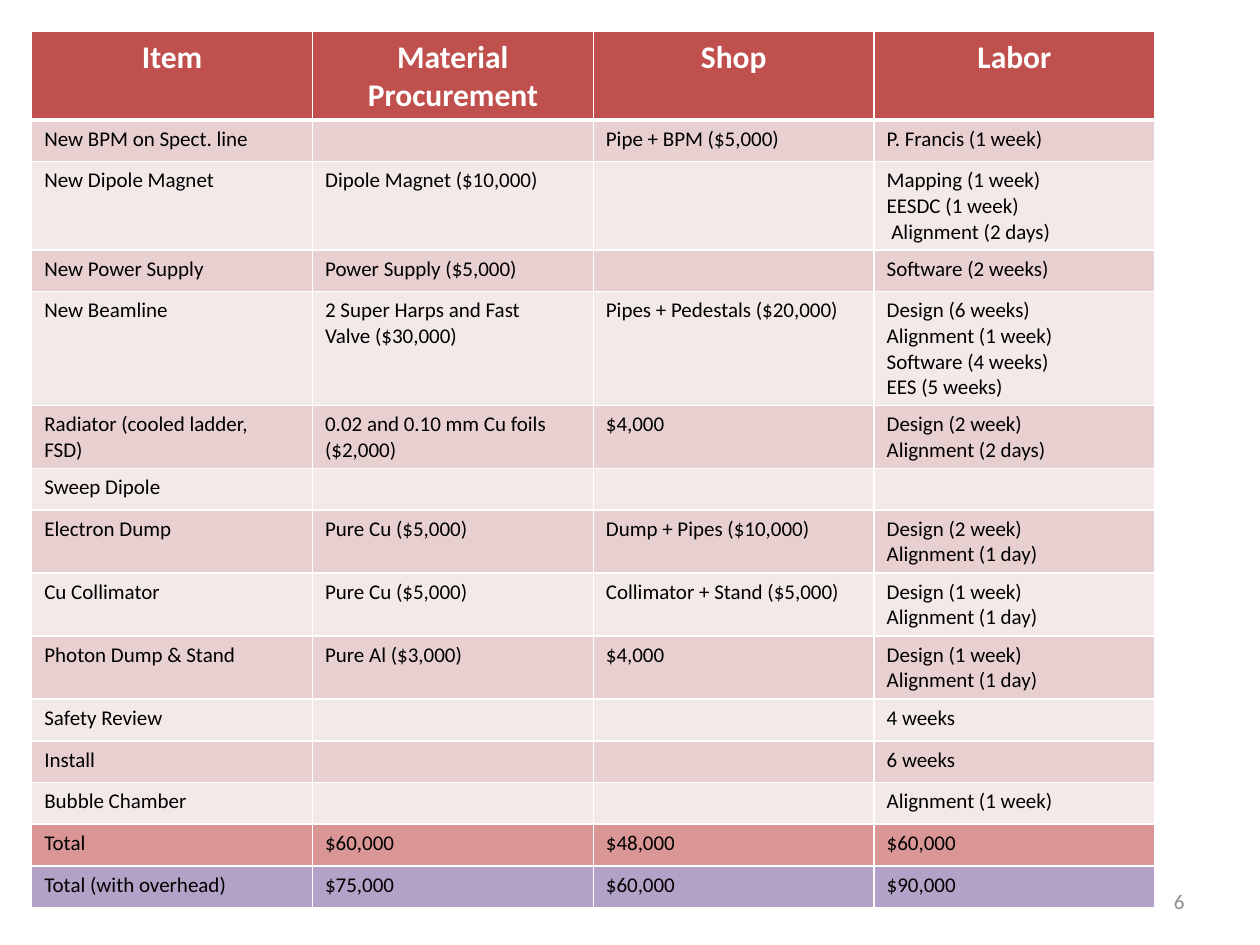
from lxml import etree
from pptx import Presentation
from pptx import util as u
from pptx.dml.color import RGBColor
from pptx.enum import text
from pptx.oxml import ns

WHITE = RGBColor(0xFF, 0xFF, 0xFF)
BLACK = RGBColor(0x00, 0x00, 0x00)
GRAY = RGBColor(0x8C, 0x8C, 0x8C)
RED = RGBColor(0xC0, 0x50, 0x4D)
BAND_DARK = RGBColor(0xE8, 0xD0, 0xD0)
BAND_LIGHT = RGBColor(0xF4, 0xE9, 0xE9)
ROSE = RGBColor(0xD9, 0x96, 0x94)
PURPLE = RGBColor(0xB3, 0xA2, 0xC7)

HEADER = {"name": "Calibri", "size": u.Pt(18), "bold": True}
BODY = {"name": "Calibri", "size": u.Pt(12), "bold": False}

COSTS = [
    ["Item", "Material\nProcurement", "Shop", "Labor"],
    ["New BPM on Spect. line", "", "Pipe + BPM ($5,000)", "P. Francis (1 week)"],
    ["New Dipole Magnet", "Dipole Magnet ($10,000)", "",
     "Mapping (1 week)\nEESDC (1 week)\n Alignment (2 days)"],
    ["New Power Supply", "Power Supply ($5,000)", "", "Software (2 weeks)"],
    ["New Beamline", "2 Super Harps and Fast\nValve ($30,000)", "Pipes + Pedestals ($20,000)",
     "Design (6 weeks)\nAlignment (1 week)\nSoftware (4 weeks)\nEES (5 weeks)"],
    ["Radiator (cooled ladder,\nFSD)", "0.02 and 0.10 mm Cu foils ($2,000)", "$4,000",
     "Design (2 week)\nAlignment (2 days)"],
    ["Sweep Dipole", "", "", ""],
    ["Electron Dump", "Pure Cu ($5,000)", "Dump + Pipes ($10,000)",
     "Design (2 week)\nAlignment (1 day)"],
    ["Cu Collimator", "Pure Cu ($5,000)", "Collimator + Stand ($5,000)",
     "Design (1 week)\nAlignment (1 day)"],
    ["Photon Dump & Stand", "Pure Al ($3,000)", "$4,000",
     "Design (1 week)\nAlignment (1 day)"],
    ["Safety Review", "", "", "4 weeks"],
    ["Install", "", "", "6 weeks"],
    ["Bubble Chamber", "", "", "Alignment (1 week)"],
    ["Total", "$60,000", "$48,000", "$60,000"],
    ["Total (with overhead)", "$75,000", "$60,000", "$90,000"],
]
BANDS = [BAND_DARK, BAND_LIGHT] * 6
ROW_FILLS = [RED, *BANDS, ROSE, PURPLE]


class SlideBuilder:
    def __init__(self, slide):
        self.slide = slide

    def fill_text(self, frame, content, style, color, align):
        frame.text = content
        for paragraph in frame.paragraphs:
            paragraph.alignment = align
            for run in paragraph.runs:
                for key, value in style.items():
                    setattr(run.font, key, value)
                run.font.color.rgb = color
            if not paragraph.runs:  # keeps an empty cell as low as its row
                end = etree.SubElement(paragraph._p, ns.qn("a:endParaRPr"))
                end.set("sz", str(int(style["size"].pt * 100)))

    def text_box(self, content, left, top, width, height, style, color, align):
        box = self.slide.shapes.add_textbox(u.Cm(left), u.Cm(top), u.Cm(width), u.Cm(height))
        frame = box.text_frame
        frame.word_wrap = True
        frame.vertical_anchor = text.MSO_ANCHOR.MIDDLE
        self.fill_text(frame, content, style, color, align)

    def borders(self, cell, widths):
        properties = cell._tc.get_or_add_tcPr()
        for side, width in widths.items():
            line = etree.SubElement(properties, ns.qn(f"a:ln{side}"), w=str(u.Pt(width)))
            fill = etree.SubElement(line, ns.qn("a:solidFill"))
            etree.SubElement(fill, ns.qn("a:srgbClr"), val=str(WHITE))

    def table(self, rows, fills, left, top, column_width, header_height):
        # A body row is as high as its longest cell, with a common minimum
        line_counts = [max(cell.count("\n") + 1 for cell in row) for row in rows[1:]]
        heights = [header_height] + [max(0.84, 0.25 + 0.51 * count) for count in line_counts]
        columns = len(rows[0])
        table = self.slide.shapes.add_table(
            len(rows), columns, u.Cm(left), u.Cm(top),
            u.Cm(column_width * columns), u.Cm(sum(heights))).table
        table.horz_banding = False
        for column in table.columns:
            column.width = u.Cm(column_width)
        for i, (row, fill, height) in enumerate(zip(rows, fills, heights)):
            table.rows[i].height = u.Cm(height)
            header = i == 0
            style, color, align = (
                (HEADER, WHITE, text.PP_ALIGN.CENTER) if header
                else (BODY, BLACK, text.PP_ALIGN.LEFT))
            widths = {"L": 1, "R": 1, "T": 3 if i == 1 else 1, "B": 3 if header else 1}
            for j, content in enumerate(row):
                cell = table.cell(i, j)
                self.fill_text(cell.text_frame, content, style, color, align)
                self.borders(cell, widths)
                cell.fill.solid()
                cell.fill.fore_color.rgb = fill


def main():
    presentation = Presentation()
    presentation.slide_width, presentation.slide_height = u.Cm(25.4), u.Cm(19.05)
    builder = SlideBuilder(presentation.slides.add_slide(presentation.slide_layouts[6]))

    # Slide number
    builder.text_box("6", 18.21, 17.65, 5.92, 1.02, BODY, GRAY, text.PP_ALIGN.RIGHT)

    # Cost table
    builder.table(COSTS, ROW_FILLS, left=0.64, top=0.64, column_width=5.66, header_height=1.78)

    presentation.save("out.pptx")


if __name__ == "__main__":
    main()
